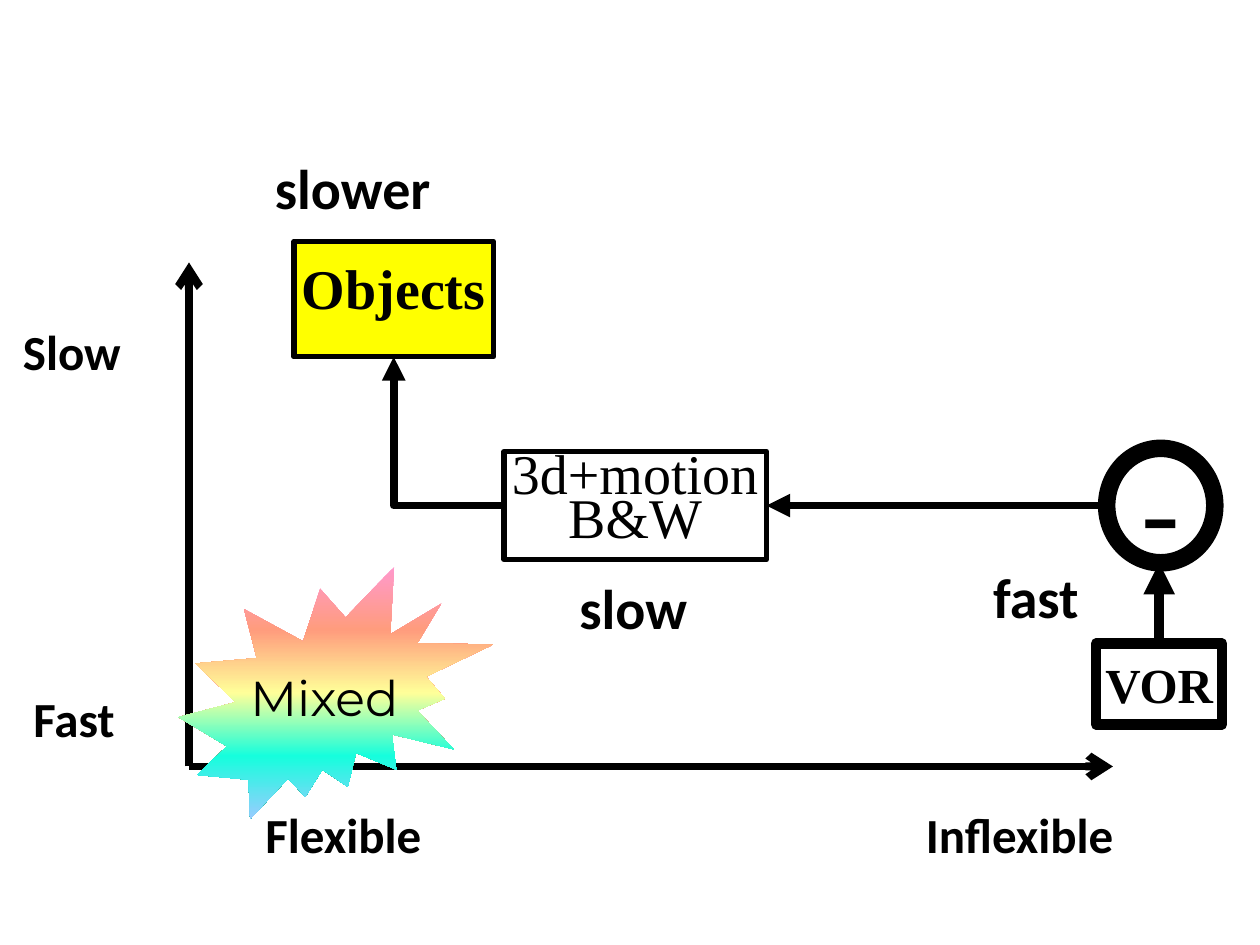
"""Builds a slide that places visual pathways on speed and flexibility axes."""
from dataclasses import dataclass

from lxml import etree
from pptx import Presentation
from pptx import util as u
from pptx.dml.color import RGBColor
from pptx.enum import shapes, text
from pptx.oxml.ns import qn

COLUMNS, ROWS = 120, 90
TOP, LEFT, BOTTOM, RIGHT = range(4)


@dataclass(frozen=True)
class Theme:
    """Colours, fonts and sizes of the slide."""
    ink: str = "000000"
    highlight: str = "FFFF00"
    rainbow: tuple = ("FF99CC", "FF9C7D", "FFFF99", "16FEDD", "99CCFF")
    label_font: str = "Calibri"
    box_font: str = "Times New Roman"
    burst_font: str = "Montserrat"
    small: int = 28
    large: int = 32
    sign: int = 66
    tight: int = 25
    thin: float = 3
    medium: float = 4.5
    thick: float = 6
    ring: float = 10


THEME = Theme()


def cells(*lengths):
    """Turn alternating columns and rows into slide lengths."""
    units = u.Inches(10) / COLUMNS, u.Inches(7.5) / ROWS
    return [u.Emu(round(n * units[i % 2])) for i, n in enumerate(lengths)]


def write(frame, lines, font, size, bold=False, align=None, spacing=None):
    """Fill a text frame with one paragraph per line."""
    frame.word_wrap = False
    for i, line in enumerate(lines.split("\n")):
        paragraph = frame.paragraphs[0] if i == 0 else frame.add_paragraph()
        paragraph.text = line
        paragraph.alignment = align
        paragraph.line_spacing = u.Pt(spacing) if spacing else None
        paragraph.font.name = font
        paragraph.font.size = u.Pt(size)
        paragraph.font.bold = bold
        paragraph.font.color.rgb = RGBColor.from_string(THEME.ink)


def add_label(slide, place, wording, size):
    """Add a bold free-standing label."""
    label = slide.shapes.add_textbox(*cells(*place))
    write(label.text_frame, wording, THEME.label_font, size, bold=True)
    label.text_frame.auto_size = text.MSO_AUTO_SIZE.SHAPE_TO_FIT_TEXT


def add_node(slide, kind, place, wording, size, font=THEME.box_font,
             border=None, fill=None, bold=False, spacing=None):
    """Add a shape with centred text."""
    node = slide.shapes.add_shape(kind, *cells(*place))
    node.shadow.inherit = False
    if fill:
        node.fill.solid()
        node.fill.fore_color.rgb = RGBColor.from_string(fill)
    else:
        node.fill.background()
    if border:
        node.line.color.rgb = RGBColor.from_string(THEME.ink)
        node.line.width = u.Pt(border)
    else:
        node.line.fill.background()
    node.text_frame.vertical_anchor = text.MSO_ANCHOR.MIDDLE
    write(node.text_frame, wording, font, size, bold,
          text.PP_ALIGN.CENTER, spacing)
    return node


def paint_rainbow(node, colours):
    """Give a shape evenly spaced gradient stops from top to bottom."""
    node.fill.gradient()
    gradient = node.fill._xPr.find(qn("a:gradFill"))
    for child in list(gradient):
        gradient.remove(child)
    stops = etree.SubElement(gradient, qn("a:gsLst"))
    for i, colour in enumerate(colours):
        position = str(i * 100000 // (len(colours) - 1))
        stop = etree.SubElement(stops, qn("a:gs"), pos=position)
        etree.SubElement(stop, qn("a:srgbClr"), val=colour)
    etree.SubElement(gradient, qn("a:lin"), ang="5400000", scaled="0")


def add_arrow(slide, start, end, width, head="triangle", preset=None,
              source=None, target=None):
    """Add an arrow, joined to (shape, side) pairs where they are given."""
    kind = shapes.MSO_CONNECTOR.ELBOW if preset else shapes.MSO_CONNECTOR.STRAIGHT
    arrow = slide.shapes.add_connector(kind, *cells(*start, *end))
    if source:
        arrow.begin_connect(*source)
    if target:
        arrow.end_connect(*target)
    arrow.line.color.rgb = RGBColor.from_string(THEME.ink)
    arrow.line.width = u.Pt(width)
    properties = arrow._element.spPr
    if preset:
        properties.find(qn("a:prstGeom")).set("prst", preset)
    etree.SubElement(arrow.line._get_or_add_ln(), qn("a:tailEnd"), type=head)
    etree.SubElement(properties, qn("a:effectLst"))


def add_pathway(slide):
    """Add the stages of the pathway and the arrows between them."""
    box = shapes.MSO_SHAPE.RECTANGLE
    add_node(slide, shapes.MSO_SHAPE.OVAL, (105.4, 42.7, 10.3, 10.9),
             "-", THEME.sign, border=THEME.ring)
    motion = add_node(slide, box, (48, 43, 25, 10.3), "3d+motion\nB&W",
                      THEME.large, border=THEME.thin, spacing=THEME.tight)
    vor = add_node(slide, box, (104.4, 61.3, 12, 7.7), "VOR", THEME.small,
                   border=THEME.thick, bold=True)
    objects = add_node(slide, box, (28, 23, 19, 11), "Objects", THEME.large,
                       border=THEME.thin, fill=THEME.highlight, bold=True,
                       spacing=THEME.tight)
    middle = 48.15
    add_arrow(slide, (105.4, middle), (73, middle), THEME.medium,
              target=(motion, RIGHT))
    add_arrow(slide, (110.4, 61.3), (110.4, 53.6), THEME.thick,
              source=(vor, TOP))
    add_arrow(slide, (48, middle), (37.5, 34), THEME.medium,
              preset="bentConnector2", source=(motion, LEFT),
              target=(objects, BOTTOM))


def add_axes(slide):
    """Add the speed and flexibility axes with their end labels."""
    origin = 18, 73
    for end in ((18, 25), (106, 73)):
        add_arrow(slide, origin, end, THEME.medium, head="arrow")
    for wording, place in (("Fast", (2, 65, 12.1, 6.8)),
                           ("Slow", (1, 30, 13.4, 6.8)),
                           ("Flexible", (24.1, 76, 20, 6.8)),
                           ("Inflexible", (87, 76, 22.9, 6.8))):
        add_label(slide, place, wording, THEME.small)


def main():
    """Build and save the slide."""
    deck = Presentation()
    deck.slide_width, deck.slide_height = cells(COLUMNS, ROWS)
    slide = deck.slides.add_slide(deck.slide_layouts[6])
    add_pathway(slide)
    add_axes(slide)
    for wording, place in (("slow", (54, 54, 14.4, 7.7)),
                           ("fast", (93.4, 53, 12, 7.7)),
                           ("slower", (25, 14, 19.4, 7.7))):
        add_label(slide, place, wording, THEME.large)
    mixed = add_node(slide, shapes.MSO_SHAPE.EXPLOSION2, (17, 54, 30, 24),
                     "Mixed", THEME.small, font=THEME.burst_font)
    paint_rainbow(mixed, THEME.rainbow)
    deck.save("out.pptx")


if __name__ == "__main__":
    main()
